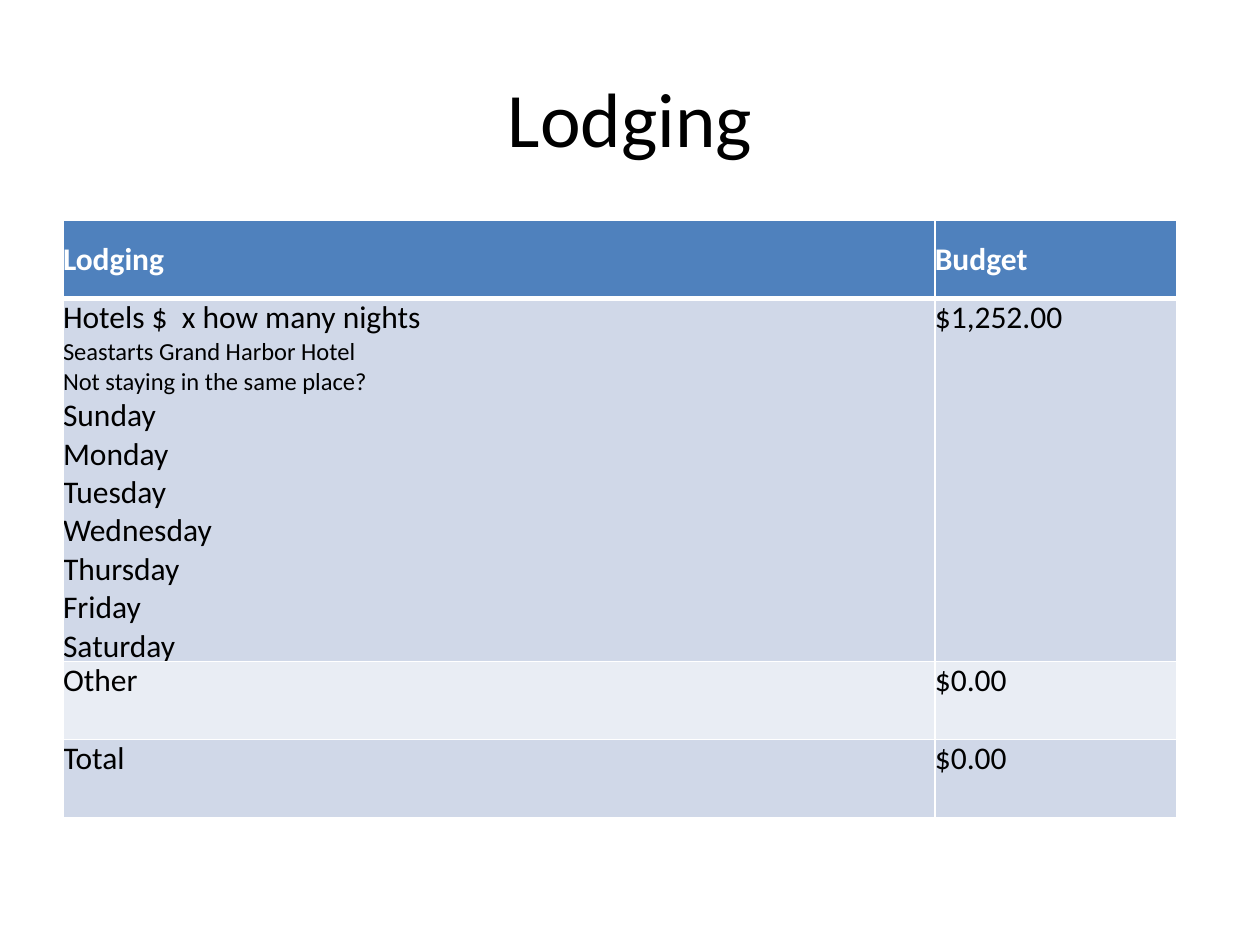
from pptx import Presentation
from pptx.dml.color import RGBColor as RGB
from pptx.enum.text import MSO_ANCHOR as Anchor, PP_ALIGN as Align
from pptx.oxml import parse_xml
from pptx.oxml.ns import nsdecls
from pptx.util import Inches, Pt

# Content
TITLE = "Lodging"
DAYS = ["Sunday", "Monday", "Tuesday", "Wednesday", "Thursday", "Friday", "Saturday"]
NOTES = ["Seastarts Grand Harbor Hotel", "Not staying in the same place?"]
ROWS = [
    (["Lodging"], ["Budget"]),
    (["Hotels $  x how many nights", *NOTES, *DAYS], ["$1,252.00"]),
    (["Other"], ["$0.00"]),
    (["Total"], ["$0.00"]),
]
WIDTHS = [6.92, 1.92]
HEIGHTS = [0.62, 2.88, 0.62, 0.62]
COLORS = {"head": "4F81BD", "odd": "D0D8E8", "even": "E9EDF4",
          "white": "FFFFFF", "black": "000000"}


def style(para, size, color, bold=False):
    for run in para.runs:
        font = run.font
        font.name, font.size, font.bold = "Calibri", Pt(size), bold
        font.color.rgb = RGB.from_string(COLORS[color])


def border(cell, row):
    """Thin white rules, with a thick one under the header."""
    thick = {0: "B", 1: "T"}.get(row)
    props = cell._tc.get_or_add_tcPr()
    for i, side in enumerate("LRTB"):
        width = Pt(3 if side == thick else 1)
        props.insert(i, parse_xml(
            f'<a:ln{side} {nsdecls("a")} w="{width}"><a:solidFill>'
            f'<a:srgbClr val="{COLORS["white"]}"/></a:solidFill></a:ln{side}>'))


def fill_cell(cell, lines, row):
    head = row == 0
    cell.margin_left = cell.margin_right = cell.margin_top = cell.margin_bottom = 0
    cell.vertical_anchor = Anchor.MIDDLE if head else Anchor.TOP
    shade = "head" if head else "odd" if row % 2 else "even"
    cell.fill.solid()
    cell.fill.fore_color.rgb = RGB.from_string(COLORS[shade])
    border(cell, row)
    cell.text_frame.text = "\n".join(lines)
    for para, line in zip(cell.text_frame.paragraphs, lines):
        style(para, 14 if line in NOTES else 18, "white" if head else "black", head)


def main():
    prs = Presentation()
    prs.slide_width, prs.slide_height = Inches(10), Inches(7.5)
    slide = prs.slides.add_slide(prs.slide_layouts[6])

    # Title
    box = slide.shapes.add_textbox(Inches(0.5), Inches(0.3), Inches(9), Inches(1.25))
    frame = box.text_frame
    frame.word_wrap = True
    frame.vertical_anchor = Anchor.MIDDLE
    frame.text = TITLE
    frame.paragraphs[0].alignment = Align.CENTER
    style(frame.paragraphs[0], 44, "black")

    # Budget table
    table = slide.shapes.add_table(
        len(ROWS), len(WIDTHS), Inches(0.5), Inches(1.75),
        Inches(sum(WIDTHS)), Inches(sum(HEIGHTS))).table
    for col, width in zip(table.columns, WIDTHS):
        col.width = Inches(width)
    for r, (cells, height) in enumerate(zip(ROWS, HEIGHTS)):
        table.rows[r].height = Inches(height)
        for c, lines in enumerate(cells):
            fill_cell(table.cell(r, c), lines, r)

    prs.save("out.pptx")


if __name__ == "__main__":
    main()
